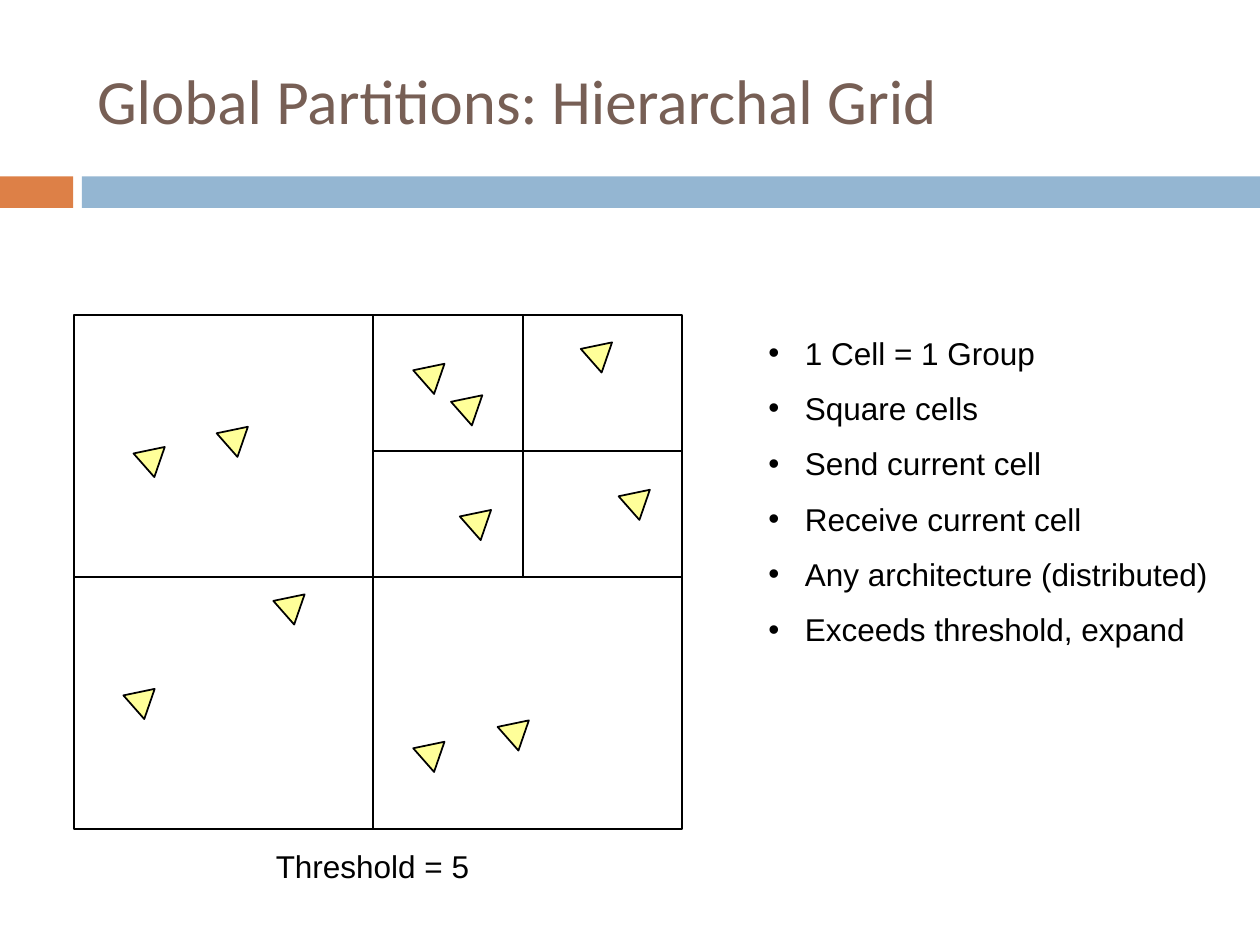
from dataclasses import dataclass

from lxml import etree
from pptx import Presentation
from pptx.dml.color import RGBColor
from pptx.enum.shapes import MSO_CONNECTOR, MSO_SHAPE
from pptx.enum.text import MSO_ANCHOR, MSO_AUTO_SIZE, PP_ALIGN
from pptx.oxml.ns import qn
from pptx.util import Inches, Pt

RECT = MSO_SHAPE.RECTANGLE
TRIANGLE = MSO_SHAPE.ISOSCELES_TRIANGLE
STRAIGHT = MSO_CONNECTOR.STRAIGHT
LEFT = PP_ALIGN.LEFT
MIDDLE = MSO_ANCHOR.MIDDLE
FIT = MSO_AUTO_SIZE.SHAPE_TO_FIT_TEXT


@dataclass(frozen=True)
class Theme:
    """Colours, fonts and sizes of the slide."""
    brown: str = "775F55"
    orange: str = "DD8047"
    blue: str = "94B6D2"
    yellow: str = "FFFF99"
    black: str = "000000"
    head: str = "Calibri"
    body: str = "Arial"
    head_size: int = 36
    body_size: int = 18
    gap: int = 10
    line: int = 1


THEME = Theme()

POINTS = [
    "1 Cell = 1 Group",
    "Square cells",
    "Send current cell",
    "Receive current cell",
    "Any architecture (distributed)",
    "Exceeds threshold, expand",
]

X0, X1, X2, X3 = 0.59, 2.96, 4.15, 5.41
Y0, Y1, Y2, Y3 = 2.5, 3.58, 4.58, 6.58

WALLS = [
    (X0, Y2, X3, Y2),
    (X1, Y0, X1, Y3),
    (X1, Y1, X3, Y1),
    (X2, Y0, X2, Y2),
]

USERS = [
    (2.21, 4.68), (3.62, 3.1), (4.65, 2.68), (4.95, 3.85),
    (1.1, 3.51), (3.32, 5.85), (3.69, 4.01), (1.76, 3.35),
    (3.99, 5.68), (3.32, 2.85), (1.02, 5.43),
]


def color(code):
    """Turn a hex code into a colour."""
    return RGBColor.from_string(code)


def add_run(para, text, font, size, code):
    """Add one styled run to a paragraph."""
    run = para.add_run()
    run.text = text
    run.font.name = font
    run.font.size = Pt(size)
    run.font.color.rgb = color(code)


def add_title(slide, text):
    """Place and fill the title."""
    title = slide.shapes.title
    title.left, title.top = Inches(0.67), Inches(0.25)
    title.width, title.height = Inches(8.92), Inches(1.08)
    frame = title.text_frame
    frame.vertical_anchor = MIDDLE
    para = frame.paragraphs[0]
    para.alignment = LEFT
    add_run(para, text, THEME.head, THEME.head_size, THEME.brown)


def add_shape(slide, kind, box, fill=None, line=None, turn=0):
    """Add a preset shape with optional fill and outline."""
    shape = slide.shapes.add_shape(kind, *map(Inches, box))
    shape.shadow.inherit = False
    shape.rotation = turn
    if fill:
        shape.fill.solid()
        shape.fill.fore_color.rgb = color(fill)
    else:
        shape.fill.background()
    if line:
        shape.line.color.rgb = color(line)
        shape.line.width = Pt(THEME.line)
    else:
        shape.line.fill.background()


def add_wall(slide, ends):
    """Add a straight line between two grid points."""
    wall = slide.shapes.add_connector(STRAIGHT, *map(Inches, ends))
    wall.line.color.rgb = color(THEME.black)
    wall.line.width = Pt(THEME.line)
    etree.SubElement(wall._element.spPr, qn("a:effectLst"))


def add_bullet(para):
    """Give a paragraph a hanging round bullet."""
    props = para._p.get_or_add_pPr()
    props.set("marL", str(Inches(0.29)))
    props.set("indent", str(-Inches(0.29)))
    etree.SubElement(props, qn("a:buFont")).set("typeface", THEME.body)
    etree.SubElement(props, qn("a:buChar")).set("char", "•")


def add_text(slide, box, lines, bullets=False):
    """Add a text box with one paragraph per line."""
    frame = slide.shapes.add_textbox(*map(Inches, box)).text_frame
    frame.word_wrap = bullets
    frame.auto_size = FIT
    for pos, text in enumerate(lines):
        para = frame.add_paragraph() if pos else frame.paragraphs[0]
        if bullets:
            para.space_after = Pt(THEME.gap)
            add_bullet(para)
        add_run(para, text, THEME.body, THEME.body_size, THEME.black)


def main():
    """Build and save the slide."""
    deck = Presentation()
    deck.slide_width, deck.slide_height = Inches(10), Inches(7.5)
    slide = deck.slides.add_slide(deck.slide_layouts[5])
    add_shape(slide, RECT, (0, 1.4, 0.58, 0.25), THEME.orange)
    add_shape(slide, RECT, (0.65, 1.4, 9.35, 0.25), THEME.blue)
    add_title(slide, "Global Partitions: Hierarchal Grid")
    add_text(slide, (6, 2.6, 4, 2.68), POINTS, bullets=True)
    add_shape(slide, RECT, (X0, Y0, X3 - X0, Y3 - Y0), line=THEME.black)
    for ends in WALLS:
        add_wall(slide, ends)
    for left, top in USERS:
        box = (left, top, 0.25, 0.22)
        add_shape(slide, TRIANGLE, box, THEME.yellow, THEME.black, 48.7)
    add_text(slide, (2.09, 6.67, 1.75, 0.4), ["Threshold = 5"])
    deck.save("out.pptx")


if __name__ == "__main__":
    main()
